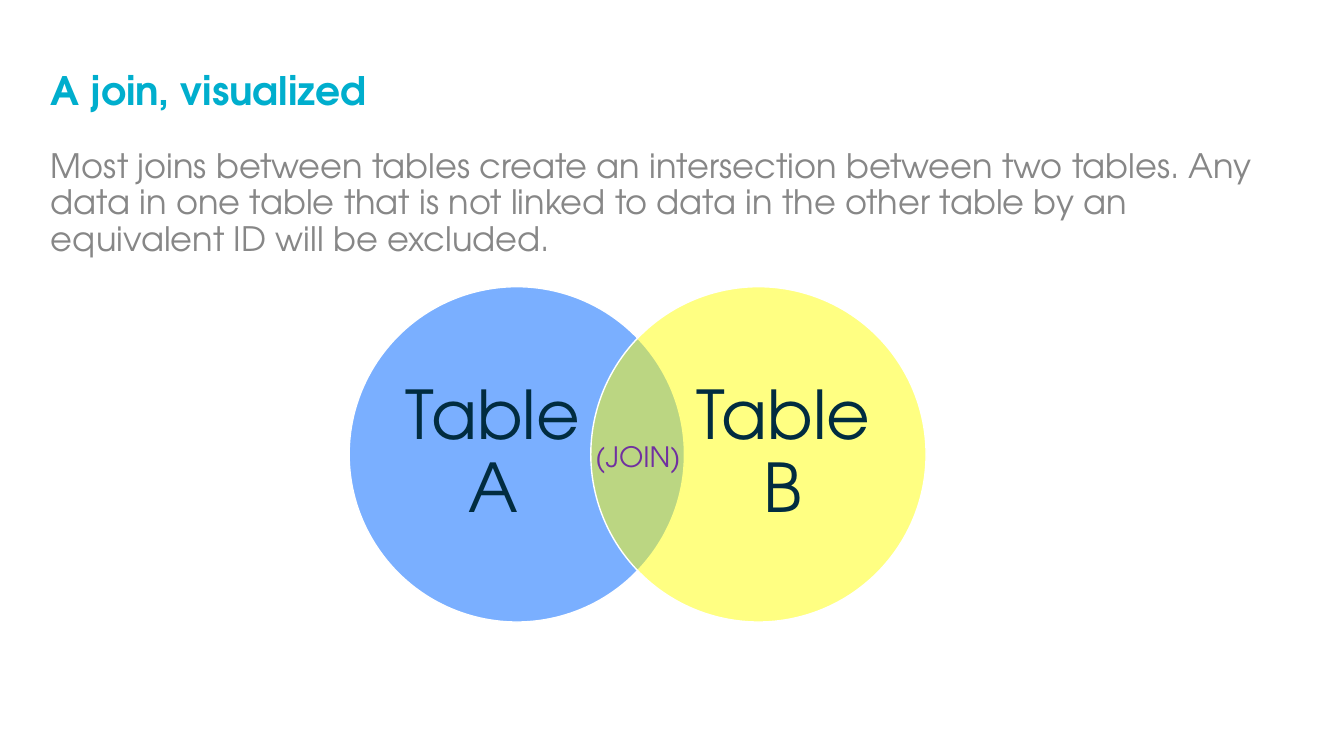
from dataclasses import dataclass

from lxml import etree
from pptx import Presentation
from pptx.dml.color import RGBColor
from pptx.enum.shapes import MSO_SHAPE
from pptx.enum.text import MSO_ANCHOR, MSO_AUTO_SIZE, PP_ALIGN
from pptx.oxml.ns import qn
from pptx.util import Pt

OVAL = MSO_SHAPE.OVAL
TOP, MIDDLE = MSO_ANCHOR.TOP, MSO_ANCHOR.MIDDLE
LEFT, CENTER = PP_ALIGN.LEFT, PP_ALIGN.CENTER
NO_AUTOFIT = MSO_AUTO_SIZE.NONE


@dataclass(frozen=True)
class Theme:
    font: str = "TeX Gyre Adventor"
    title_color: str = "00AECD"
    body_color: str = "878787"
    label_color: str = "012C40"
    join_color: str = "7030A0"
    outline_color: str = "FFFFFF"
    table_a_color: str = "0066FF"
    table_b_color: str = "FFFF00"
    title_size: int = 28
    body_size: int = 24
    label_size: int = 48
    join_size: int = 20


class SlideBuilder:
    """Places styled elements on one slide; boxes are (left, top, width, height) in points."""

    def __init__(self, slide, theme):
        self.slide = slide
        self.theme = theme

    def _write(self, shape, text, size, color, align, anchor, spacing=0.9, bold=False):
        frame = shape.text_frame
        frame.word_wrap = True
        frame.auto_size = NO_AUTOFIT
        frame.vertical_anchor = anchor
        frame.text = text
        paragraph = frame.paragraphs[0]
        self._remove_bullet(paragraph)
        paragraph.alignment = align
        paragraph.line_spacing = spacing
        paragraph.space_before = Pt(0)
        font = paragraph.font
        font.name = self.theme.font
        font.size = Pt(size)
        font.bold = bold
        font.color.rgb = RGBColor.from_string(color)

    def _remove_bullet(self, paragraph):
        properties = paragraph._p.get_or_add_pPr()
        properties.set("marL", "0")
        properties.set("indent", "0")
        etree.SubElement(properties, qn("a:buNone"))

    def _place(self, shape, box):
        shape.left, shape.top, shape.width, shape.height = map(Pt, box)

    def title(self, text, box):
        title = self.slide.shapes.title
        self._place(title, box)
        self._write(title, text, self.theme.title_size, self.theme.title_color,
                    LEFT, MIDDLE, bold=True)

    def body(self, text, box):
        body = self.slide.placeholders[1]
        self._place(body, box)
        self._write(body, text, self.theme.body_size, self.theme.body_color, LEFT, TOP)

    def circle(self, left, top, diameter, color, opacity):
        """Draw a see-through circle; opacity is in percent."""
        circle = self.slide.shapes.add_shape(OVAL, *map(Pt, (left, top, diameter, diameter)))
        circle.shadow.inherit = False
        circle.fill.solid()
        circle.fill.fore_color.rgb = RGBColor.from_string(color)
        fill_color = circle.fill._xPr.find(qn("a:solidFill"))[0]
        etree.SubElement(fill_color, qn("a:alpha"), val=str(opacity * 1000))
        circle.line.color.rgb = RGBColor.from_string(self.theme.outline_color)
        circle.line.width = Pt(1)

    def label(self, text, box, size, color, spacing=0.9, inset=None):
        label = self.slide.shapes.add_textbox(*map(Pt, box))
        if inset is not None:
            frame = label.text_frame
            frame.margin_left = frame.margin_right = Pt(inset)
            frame.margin_top = frame.margin_bottom = Pt(inset)
        self._write(label, text, size, color, CENTER, MIDDLE, spacing)


def main():
    theme = Theme()
    deck = Presentation()
    deck.slide_width, deck.slide_height = Pt(960), Pt(540)
    builder = SlideBuilder(deck.slides.add_slide(deck.slide_layouts[1]), theme)

    builder.title("A join, visualized", (29.2, 39.6, 828, 53.3))
    builder.body(
        "Most joins between tables create an intersection between two tables. "
        "Any data in one table that is not linked to data in the other table "
        "by an equivalent ID will be excluded.",
        (29.2, 103.2, 899.3, 367.2))

    tables = [
        ("Table\vA", 249.4, 283, theme.table_a_color, 52),
        ("Table\vB", 422, 490.3, theme.table_b_color, 49),
    ]
    for name, circle_left, name_left, color, opacity in tables:
        builder.circle(circle_left, 204.8, 239.5, color, opacity)
        builder.label(name, (name_left, 233, 138.2, 182.9),
                      theme.label_size, theme.label_color, inset=0)
    builder.label("(JOIN)", (417.6, 309.4, 76.3, 31),
                  theme.join_size, theme.join_color, spacing=1.07)

    deck.save("out.pptx")


if __name__ == "__main__":
    main()
